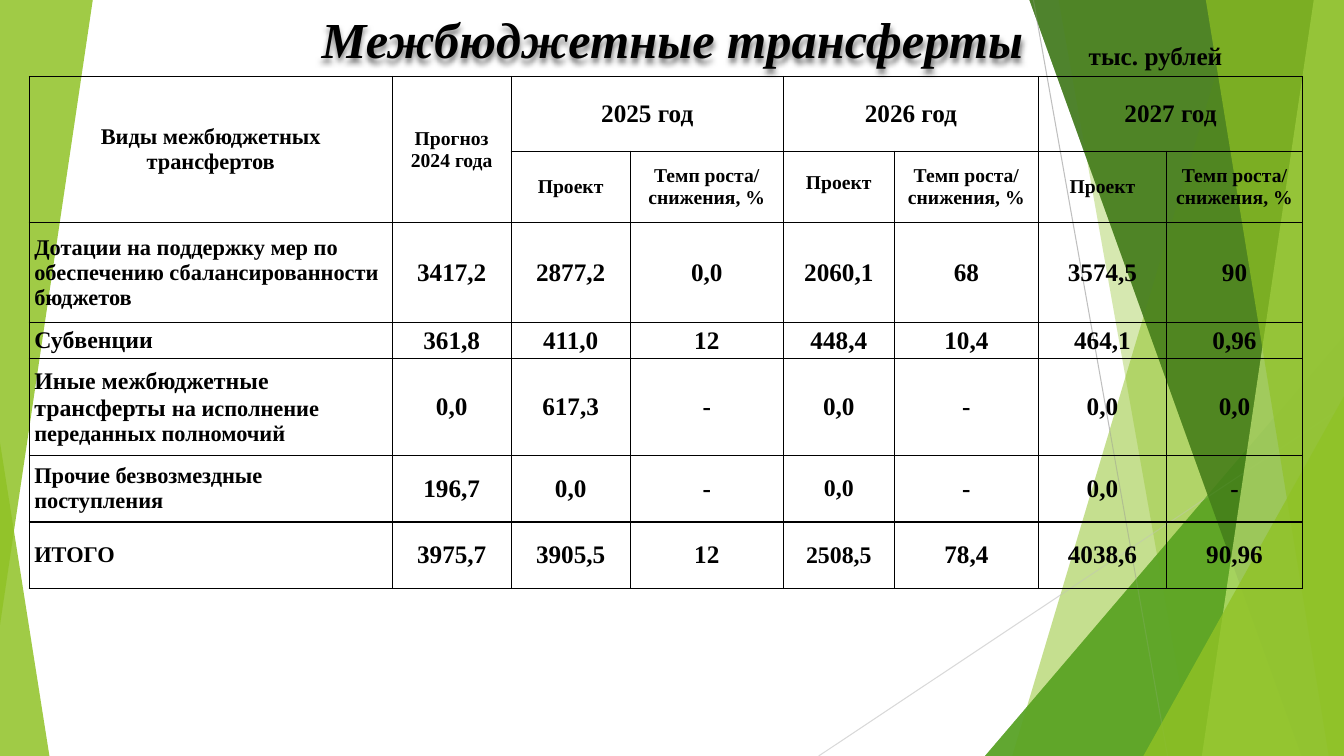
"""Build the slide with the table of interbudgetary transfers."""
from lxml.etree import SubElement
from pptx import Presentation
from pptx.dml.color import RGBColor
from pptx.enum.shapes import MSO_CONNECTOR, MSO_SHAPE
from pptx.enum.text import MSO_ANCHOR, PP_ALIGN
from pptx.oxml.ns import qn
from pptx.util import Pt

PX = 9144
WIDTH, HEIGHT = 1333, 750


def paint(fill, color, opacity=100):
    fill.solid()
    fill.fore_color.rgb = RGBColor.from_string(color)
    if opacity < 100:
        choice = fill.fore_color._xFill.find(qn("a:srgbClr"))
        SubElement(choice, qn("a:alpha"), val=str(opacity * 1000))


def write(para, text, size=18, align=PP_ALIGN.CENTER, italic=False):
    para.alignment = align
    span = para.add_run()
    span.text = text
    span.font.name = "Times New Roman"
    span.font.size = Pt(size)
    span.font.bold = True
    span.font.italic = italic
    paint(span.font.fill, "000000")


deck = Presentation()
deck.slide_width, deck.slide_height = WIDTH * PX, HEIGHT * PX
page = deck.slides.add_slide(deck.slide_layouts[6])
shapes = page.shapes

band_facets = [
    ("band", (1228, 1004), "90C226", 30),
    ("band", (1050, 1183), "90C226", 20),
    ("triangle", (977, 333, 356, 417, 1, 0), "54A021", 72),
    ("band", (1021, 1291), "3F7819", 70),
    ("band", (1303, 1192), "C0E474", 70),
    ("band", (1196, 1318), "90C226", 65),
    ("triangle", (1134, 393, 199, 357, 1, 0), "90C226", 80),
]
lower_left = ("triangle", (0, 439, 49, 311, 0, 0), "90C226", 85)
upper_left = ("triangle", (0, 0, 92, 620, 1, 180), "90C226", 85)
rays = [((1025, 0, 1158, 750), "BFBFBF"), ((1333, 403, 812, 750), "D9D9D9")]

for layer_rays, left_facet in (([], lower_left), (rays, upper_left)):
    for ends, color in layer_rays:
        ray = shapes.add_connector(MSO_CONNECTOR.STRAIGHT, *[end * PX for end in ends])
        paint(ray.line.fill, color)
        ray.line.width = Pt(0.75)
        SubElement(ray._element.spPr, qn("a:effectLst"))
    for kind, geometry, color, opacity in band_facets + [left_facet]:
        if kind == "band":
            top, bottom = geometry
            outline = shapes.build_freeform(top, 0, scale=PX)
            outline.add_line_segments([(WIDTH, 0), (WIDTH, HEIGHT), (bottom, HEIGHT)])
            facet = outline.convert_to_shape()
        else:
            *place, apex, turn = geometry
            facet = shapes.add_shape(MSO_SHAPE.ISOSCELES_TRIANGLE, *[n * PX for n in place])
            facet.adjustments[0] = apex
            facet.rotation = turn
        paint(facet.fill, color, opacity)
        facet.line.fill.background()
        facet.shadow.inherit = False

title = shapes.add_shape(MSO_SHAPE.ROUNDED_RECTANGLE, 167 * PX, 0, 1000 * PX, 76 * PX)
title.fill.background()
title.line.fill.background()
title.shadow.inherit = False
shadow = SubElement(title._element.spPr.find(qn("a:effectLst")), qn("a:outerShdw"),
                    blurRad="50800", dist="38100", dir="5400000", rotWithShape="0")
shade = SubElement(shadow, qn("a:srgbClr"), val="000000")
SubElement(shade, qn("a:alpha"), val="50000")
frame = title.text_frame
frame.margin_left = frame.margin_right = frame.margin_top = frame.margin_bottom = 0
frame.vertical_anchor = MSO_ANCHOR.MIDDLE
write(frame.paragraphs[0], "Межбюджетные трансферты", size=36, italic=True)

columns = [360, 118, 118, 152, 110, 143, 127, 135]
heights = [74, 71, 99, 36, 96, 66, 66]
headings = {
    (0, 0): ("Виды межбюджетных трансфертов", 16, (1, 0)),
    (0, 1): ("Прогноз\n2024 года", 14, (1, 1)),
}
for column, year in zip((2, 4, 6), (2025, 2026, 2027)):
    headings[0, column] = (f"{year} год", 18, (0, column + 1))
    headings[1, column] = ("Проект", 14, None)
    headings[1, column + 1] = ("Темп роста/ снижения, %", 14, None)
records = [
    ([("Дотации на поддержку мер по обеспечению сбалансированности бюджетов", 16)],
     ["3417,2", "2877,2", "0,0", "2060,1", "68", "3574,5", "90"]),
    ([("Субвенции", 17)],
     ["361,8", "411,0", "12", "448,4", "10,4", "464,1", "0,96"]),
    ([("Иные межбюджетные трансферты ", 17), ("на исполнение переданных полномочий", 16)],
     ["0,0", "617,3", "-", "0,0", "-", "0,0", "0,0"]),
    ([("Прочие безвозмездные поступления", 16)],
     ["196,7", "0,0", "-", "0,0", "-", "0,0", "-"]),
    ([("ИТОГО", 16)],
     ["3975,7", "3905,5", "12", "2508,5", "78,4", "4038,6", "90,96"]),
]
smaller_values = {(5, 4), (6, 4)}

table = shapes.add_table(len(heights), len(columns), 29 * PX, 76 * PX,
                         sum(columns) * PX, sum(heights) * PX).table
table.first_row = table.horz_banding = False
for column, width in zip(table.columns, columns):
    column.width = width * PX
for row, height in zip(table.rows, heights):
    row.height = height * PX
for cell in table.iter_cells():
    cell.margin_left = cell.margin_right = 5 * PX
    cell.margin_top = cell.margin_bottom = 0
    cell.vertical_anchor = MSO_ANCHOR.MIDDLE
    properties = cell._tc.get_or_add_tcPr()
    for side in ("lnL", "lnR", "lnT", "lnB"):
        border = SubElement(properties, qn(f"a:{side}"), w=str(Pt(1)))
        SubElement(SubElement(border, qn("a:solidFill")), qn("a:srgbClr"), val="000000")
    cell.fill.background()

for (row, column), (text, size, last) in headings.items():
    cell = table.cell(row, column)
    if last:
        cell.merge(table.cell(*last))
    for index, line in enumerate(text.split("\n")):
        para = cell.text_frame.add_paragraph() if index else cell.text_frame.paragraphs[0]
        write(para, line, size=size)
table.cell(1, 4).margin_bottom = 8 * PX

for row, (label, values) in enumerate(records, start=2):
    for text, size in label:
        write(table.cell(row, 0).text_frame.paragraphs[0], text, size=size, align=PP_ALIGN.LEFT)
    for column, value in enumerate(values, start=1):
        size = 17 if (row, column) in smaller_values else 18
        write(table.cell(row, column).text_frame.paragraphs[0], value, size=size)

unit_box = shapes.add_textbox(1070 * PX, 35 * PX, 154 * PX, 40 * PX)
unit_box.text_frame.word_wrap = False
write(unit_box.text_frame.paragraphs[0], "тыс. рублей", align=PP_ALIGN.LEFT)

deck.save("out.pptx")
